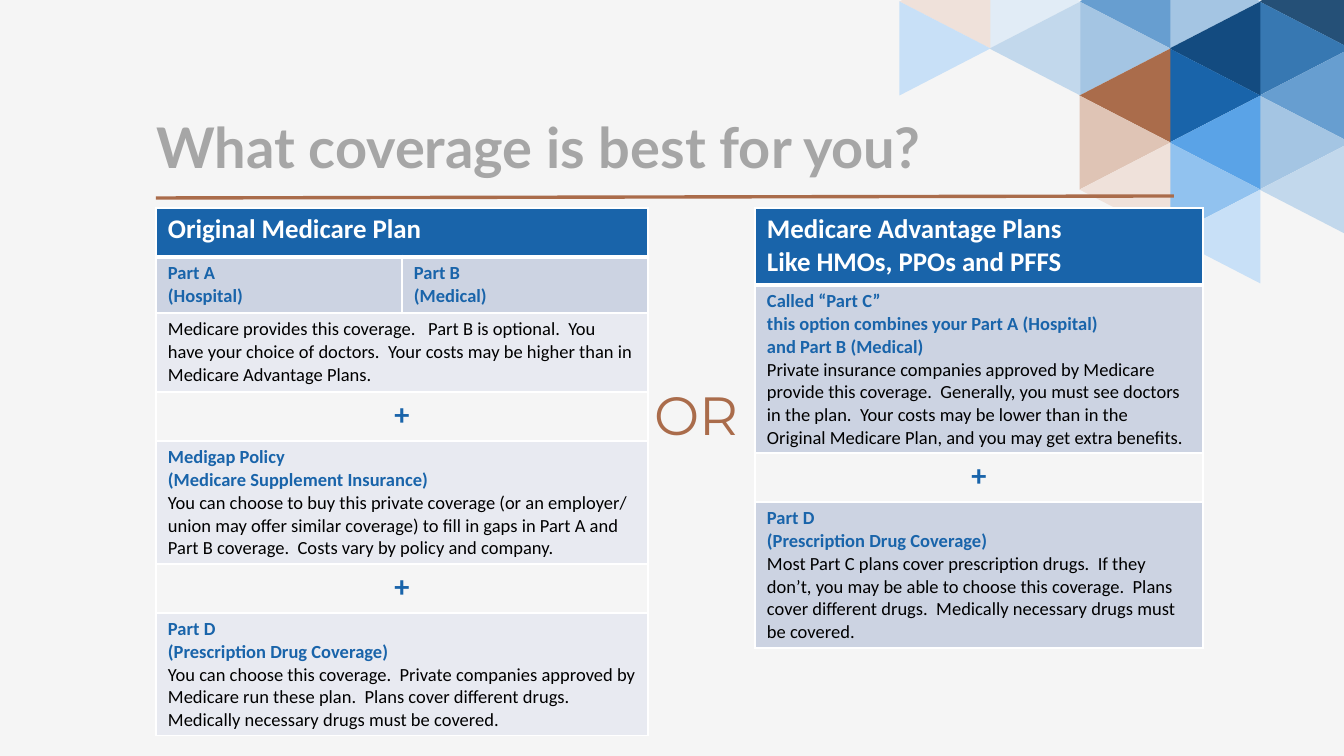
from dataclasses import dataclass

from lxml.etree import SubElement
from pptx import Presentation
from pptx.dml.color import RGBColor
from pptx.enum.shapes import MSO_CONNECTOR as Connector, MSO_SHAPE as Preset
from pptx.enum.text import MSO_ANCHOR as Anchor, PP_ALIGN as Align
from pptx.oxml.ns import qn
from pptx.util import Emu, Pt

SCALE = 914400 / 121
BLUE, RUST, GREY, WHITE, BLACK = "1964AA", "AA6C4B", "A6A6A6", "FFFFFF", "000000"
BAND, PALE = "CCD3E2", "E8EAF1"


def px(length: int) -> Emu:
    """Turn px into EMU."""
    return Emu(round(length * SCALE))


def colour(value: str) -> RGBColor:
    """Turn a hex string into a colour."""
    return RGBColor.from_string(value)


@dataclass(frozen=True)
class Style:
    """Look of one kind of text."""
    size: float
    color: str
    name: str = "Calibri"
    bold: bool = True
    align: Align = Align.LEFT


TITLE = Style(33.3, GREY, "Lato")
OR_STYLE = Style(32, RUST, "Montserrat", False)
HEADER = Style(16, WHITE)
LABEL = Style(11, BLUE)
BODY = Style(11, BLACK, bold=False)
PLUS = Style(18, BLUE, align=Align.CENTER)


@dataclass(frozen=True)
class Line:
    """One paragraph and its style."""
    text: str
    style: Style


@dataclass(frozen=True)
class Row:
    """One table row; a single cell spans every column."""
    height: int
    cells: list[list[Line]]
    fill: str | None = None
    bottom: int = 1


@dataclass(frozen=True)
class Plan:
    """One plan table."""
    left: int
    columns: list[int]
    rows: list[Row]


@dataclass(frozen=True)
class Strip:
    """One column of triangles, drawn downwards."""
    column: int
    angle: int
    fills: list[str]


STRIPS = [
    Strip(4, 270, ["255077", "3778B2", "679ED0", "A4C5E3", "C2D8EC"]),
    Strip(3, 90, ["A4C5E3", "134B80", BLUE, "5AA3E7", "91C2EF", "C8E0F7"]),
    Strip(2, 270, ["679ED0", "A4C5E3", RUST, "DFC4B5", "EFE1DA"]),
    Strip(1, 90, ["E1ECF6", "C2D8EC"]),
    Strip(0, 270, ["EFE1DA", "C8E0F7"]),
]


def entry(labels: list[str], body: str = "") -> list[Line]:
    """Build blue label lines followed by black body text."""
    lines = [Line(label, LABEL) for label in labels]
    return lines + ([Line(body, BODY)] if body else [])


PLUS_ROW = Row(49, [[Line("+", PLUS)]])
PART_D = ["Part D", "(Prescription Drug Coverage)"]

PLANS = [
    Plan(156, [246, 246], [
        Row(49, [[Line("Original Medicare Plan", HEADER)]], BLUE, 3),
        Row(56, [entry(["Part A", "(Hospital)"]), entry(["Part B", "(Medical)"])], BAND),
        Row(79, [entry([], "Medicare provides this coverage.   Part B is optional.  "
                           "You have your choice of doctors.  Your costs may be higher "
                           "than in Medicare Advantage Plans.")], PALE),
        PLUS_ROW,
        Row(123, [entry(["Medigap Policy", "(Medicare Supplement Insurance)"],
                        "You can choose to buy this private coverage (or an employer/ "
                        "union may offer similar coverage) to fill in gaps in Part A and "
                        "Part B coverage.  Costs vary by policy and company.")], PALE),
        PLUS_ROW,
        Row(123, [entry(PART_D, "You can choose this coverage.  Private companies approved "
                                "by Medicare run these plan.  Plans cover different drugs.  "
                                "Medically necessary drugs must be covered.")], PALE),
    ]),
    Plan(755, [448], [
        Row(77, [[Line("Medicare Advantage Plans", HEADER),
                  Line("Like HMOs, PPOs and PFFS", HEADER)]], BLUE, 3),
        Row(168, [entry(["Called “Part C”", "this option combines your Part A (Hospital)",
                         "and Part B (Medical)"],
                        "Private insurance companies approved by Medicare provide this "
                        "coverage.  Generally, you must see doctors in the plan.  Your costs "
                        "may be lower than in the Original Medicare Plan, and you may get "
                        "extra benefits.")], BAND),
        PLUS_ROW,
        Row(146, [entry(PART_D, "Most Part C plans cover prescription drugs.  If they don’t, "
                                "you may be able to choose this coverage.  Plans cover "
                                "different drugs.  Medically necessary drugs must be "
                                "covered.")], BAND),
    ]),
]


def set_all(target, values: dict) -> None:
    """Set each attribute named in the dict."""
    for key, value in values.items():
        setattr(target, key, value)


def write(frame, lines: list[Line]) -> None:
    """Write styled paragraphs into a text frame."""
    for index, line in enumerate(lines):
        para = frame.paragraphs[0] if index == 0 else frame.add_paragraph()
        para.alignment = line.style.align
        span = para.add_run()
        span.text = line.text
        set_all(span.font, {"size": Pt(line.style.size), "name": line.style.name,
                            "bold": line.style.bold})
        span.font.color.rgb = colour(line.style.color)


def set_box(box, area: tuple[int, int, int, int], sides: int, ends: int, line: Line) -> None:
    """Place a text shape and write its one line."""
    set_all(box, dict(zip(("left", "top", "width", "height"), map(px, area))))
    frame = box.text_frame
    set_all(frame, {"word_wrap": True, "vertical_anchor": Anchor.MIDDLE,
                    "margin_left": px(sides), "margin_right": px(sides),
                    "margin_top": px(ends), "margin_bottom": px(ends)})
    write(frame, [line])


def add_strip(page, strip: Strip) -> None:
    """Draw one column of alternating triangles."""
    for step, fill in enumerate(strip.fills):
        shape = page.shapes.add_shape(Preset.ISOSCELES_TRIANGLE, px(898 + 90 * strip.column),
                                      px(-44 + 47 * step), px(94), px(91))
        shape.rotation = (strip.angle + 180 * step) % 360
        shape.shadow.inherit = False
        shape.fill.solid()
        shape.fill.fore_color.rgb = colour(fill)
        shape.line.fill.background()


def format_cell(cell, row: Row) -> None:
    """Set the margins, white borders and fill of a cell."""
    set_all(cell, {"margin_left": px(12), "margin_right": px(12),
                   "margin_top": px(5), "margin_bottom": px(5)})
    props = cell._tc.get_or_add_tcPr()
    for side, width in {"L": 1, "R": 1, "T": 1, "B": row.bottom}.items():
        border = SubElement(props, qn(f"a:ln{side}"), w=str(Pt(width)))
        SubElement(SubElement(border, qn("a:solidFill")), qn("a:srgbClr"), val=WHITE)
    if row.fill:
        cell.fill.solid()
        cell.fill.fore_color.rgb = colour(row.fill)
    else:
        cell.fill.background()


def add_plan(page, plan: Plan) -> None:
    """Draw one plan table."""
    height = sum(row.height for row in plan.rows)
    table = page.shapes.add_table(len(plan.rows), len(plan.columns), px(plan.left), px(208),
                                  px(sum(plan.columns)), px(height)).table
    set_all(table, {"first_row": False, "horz_banding": False})
    for column, width in zip(table.columns, plan.columns):
        column.width = px(width)
    for index, row in enumerate(plan.rows):
        table.rows[index].height = px(row.height)
        cells = list(table.rows[index].cells)
        for cell in cells:
            format_cell(cell, row)
        if len(row.cells) < len(cells):
            cells[0].merge(cells[-1])
        for cell, lines in zip(cells, row.cells):
            write(cell.text_frame, lines)


def add_rule(page) -> None:
    """Draw the line under the title."""
    rule = page.shapes.add_connector(Connector.STRAIGHT, px(156), px(198), px(1174), px(196))
    rule.line.color.rgb = colour(RUST)
    rule.line.width = Pt(2)
    SubElement(rule._element.spPr, qn("a:effectLst"))


def main() -> None:
    """Build and save the slide."""
    deck = Presentation()
    set_all(deck, {"slide_width": px(1344), "slide_height": px(756)})
    page = deck.slides.add_slide(deck.slide_layouts[5])
    page.background.fill.solid()
    page.background.fill.fore_color.rgb = colour("F5F5F5")
    for strip in STRIPS:
        add_strip(page, strip)
    add_rule(page)
    set_box(page.shapes.title, (156, 123, 1016, 47), 0, 5,
            Line("What coverage is best for you?", TITLE))
    or_box = page.shapes.add_textbox(0, 0, 0, 0)
    set_box(or_box, (650, 378, 106, 73), 4, 4, Line("OR", OR_STYLE))
    for plan in PLANS:
        add_plan(page, plan)
    deck.save("out.pptx")


if __name__ == "__main__":
    main()
